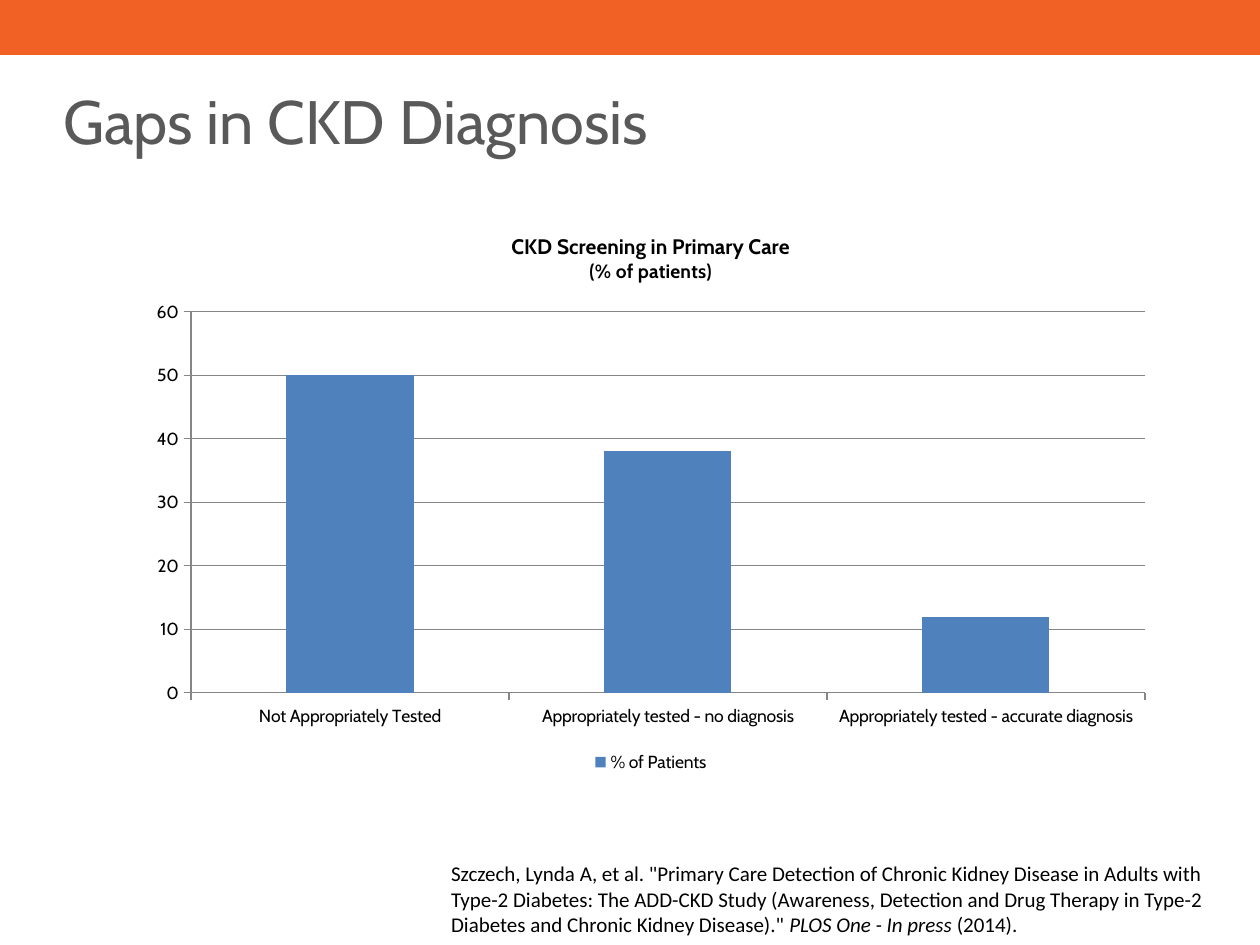
from dataclasses import dataclass

from pptx import Presentation
from pptx import util as u
from pptx.chart.data import CategoryChartData
from pptx.dml.color import RGBColor
from pptx.enum import chart as ch, shapes, text

SLIDE_W, SLIDE_H = u.Inches(10), u.Inches(7.5)


@dataclass(frozen=True)
class Theme:
    heading_font: str = "Cabin"
    citation_font: str = "Calibri"
    accent: str = "F16025"
    heading: str = "595959"
    ink: str = "000000"
    paper: str = "FFFFFF"
    bar: str = "4F81BD"
    grid: str = "868686"
    heading_size: float = 35
    citation_size: float = 12
    chart_title_size: float = 12
    chart_subtitle_size: float = 11
    chart_size: float = 10


@dataclass(frozen=True)
class Area:
    left: float
    top: float
    width: float
    height: float

    def emu(self) -> tuple[int, int, int, int]:
        return (int(self.left * SLIDE_W), int(self.top * SLIDE_H),
                int(self.width * SLIDE_W), int(self.height * SLIDE_H))


@dataclass(frozen=True)
class Phrase:
    words: str
    italic: bool = False


THEME = Theme()
BAND = Area(0, 0, 1, 0.056)
HEADING = Area(0.05, 0.077, 0.9, 0.1)
SCREENING = Area(0.108, 0.223, 0.817, 0.6)
CITATION = Area(0.358, 0.911, 0.641, 0.081)
RATES = {
    "Not Appropriately Tested": 50,
    "Appropriately tested - no diagnosis": 38,
    "Appropriately tested - accurate diagnosis": 12,
}
SOURCE = [
    Phrase('Szczech, Lynda A, et al. "Primary Care Detection of Chronic Kidney '
           "Disease in Adults with Type-2 Diabetes: The ADD-CKD Study (Awareness, "
           "Detection and Drug Therapy in Type-2 Diabetes and Chronic Kidney "
           'Disease)." '),
    Phrase("PLOS One - In press", italic=True),
    Phrase(" (2014)."),
]


def style_font(font, face: str, size: float, color: str) -> None:
    font.name = face
    font.size = u.Pt(size)
    font.color.rgb = RGBColor.from_string(color)


def clear_margins(frame) -> None:
    frame.margin_left = frame.margin_right = 0
    frame.margin_top = frame.margin_bottom = 0
    frame.word_wrap = True


def add_panel(slide, area: Area, color: str):
    panel = slide.shapes.add_shape(shapes.MSO_SHAPE.RECTANGLE, *area.emu())
    panel.shadow.inherit = False
    panel.fill.solid()
    panel.fill.fore_color.rgb = RGBColor.from_string(color)
    panel.line.fill.background()
    return panel


def add_band(slide) -> None:
    band = add_panel(slide, BAND, THEME.accent)
    band.line.color.rgb = RGBColor.from_string(THEME.accent)
    band.line.width = u.Pt(2)


def set_heading(slide, words: str) -> None:
    heading = slide.shapes.title
    heading.left, heading.top, heading.width, heading.height = HEADING.emu()
    frame = heading.text_frame
    clear_margins(frame)
    frame.vertical_anchor = text.MSO_ANCHOR.MIDDLE
    frame.text = words
    paragraph = frame.paragraphs[0]
    paragraph.alignment = text.PP_ALIGN.LEFT
    style_font(paragraph.font, THEME.heading_font, THEME.heading_size, THEME.heading)


def add_citation(slide, phrases: list[Phrase]) -> None:
    frame = add_panel(slide, CITATION, THEME.paper).text_frame
    clear_margins(frame)
    frame.vertical_anchor = text.MSO_ANCHOR.TOP
    frame.auto_size = text.MSO_AUTO_SIZE.SHAPE_TO_FIT_TEXT
    paragraph = frame.paragraphs[0]
    paragraph.alignment = text.PP_ALIGN.LEFT
    paragraph.space_after = u.Pt(10)
    style_font(paragraph.font, THEME.citation_font, THEME.citation_size, THEME.ink)
    for phrase in phrases:
        run = paragraph.add_run()
        run.text = phrase.words
        run.font.italic = phrase.italic


def style_line(line) -> None:
    line.color.rgb = RGBColor.from_string(THEME.grid)
    line.width = u.Pt(0.75)


def title_chart(chart, lines: list[tuple[str, float]]) -> None:
    chart.has_title = True
    frame = chart.chart_title.text_frame
    frame.text = "\n".join(words for words, _ in lines)
    for paragraph, (_, size) in zip(frame.paragraphs, lines):
        style_font(paragraph.font, THEME.heading_font, size, THEME.ink)
        paragraph.font.bold = True
    chart.chart_title.include_in_layout = False


def add_screening_chart(slide, rates: dict[str, int]) -> None:
    data = CategoryChartData()
    data.categories = list(rates)
    data.add_series("% of Patients", list(rates.values()))
    chart = slide.shapes.add_chart(
        ch.XL_CHART_TYPE.COLUMN_CLUSTERED, *SCREENING.emu(), data).chart
    style_font(chart.font, THEME.heading_font, THEME.chart_size, THEME.ink)
    title_chart(chart, [
        ("CKD Screening in Primary Care", THEME.chart_title_size),
        ("(% of patients)", THEME.chart_subtitle_size),
    ])

    chart.has_legend = True
    chart.legend.position = ch.XL_LEGEND_POSITION.BOTTOM
    chart.legend.include_in_layout = False

    for axis in (chart.category_axis, chart.value_axis):
        axis.major_tick_mark = ch.XL_TICK_MARK.OUTSIDE
        axis.minor_tick_mark = ch.XL_TICK_MARK.NONE
        style_line(axis.format.line)
    rate_axis = chart.value_axis
    rate_axis.minimum_scale, rate_axis.maximum_scale = 0, 60
    rate_axis.major_unit = 10
    rate_axis.has_major_gridlines = True
    style_line(rate_axis.major_gridlines.format.line)

    plot = chart.plots[0]
    plot.gap_width = 150
    plot.vary_by_categories = False
    bars = plot.series[0].format.fill
    bars.solid()
    bars.fore_color.rgb = RGBColor.from_string(THEME.bar)


def main() -> None:
    deck = Presentation()
    deck.slide_width, deck.slide_height = SLIDE_W, SLIDE_H
    slide = deck.slides.add_slide(deck.slide_layouts.get_by_name("Title Only"))
    add_band(slide)
    set_heading(slide, "Gaps in CKD Diagnosis")
    add_citation(slide, SOURCE)
    add_screening_chart(slide, RATES)
    deck.save("out.pptx")


if __name__ == "__main__":
    main()
